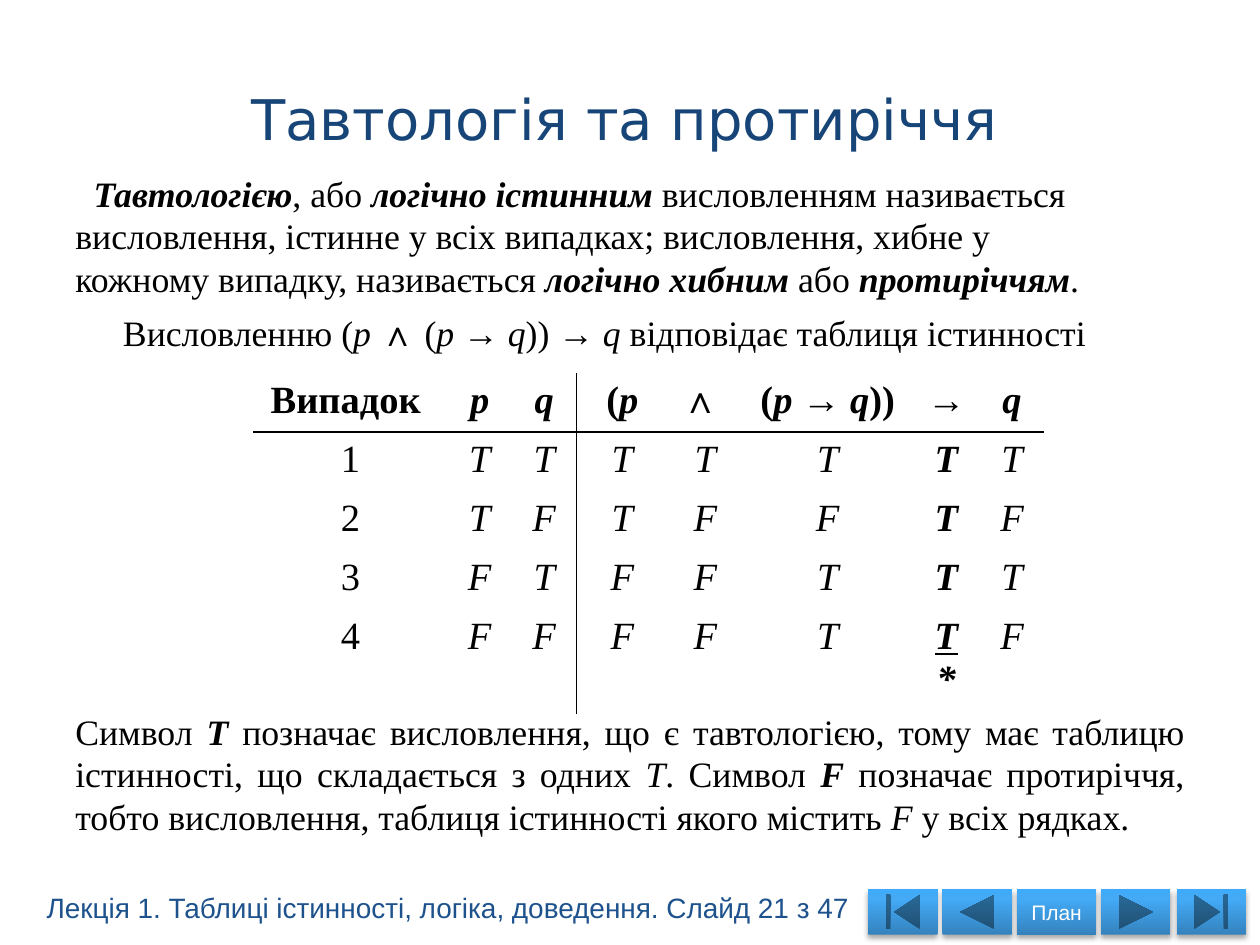
"""Build a slide on tautology and contradiction with a truth table."""
from dataclasses import dataclass
from typing import Any

from pptx import Presentation
from pptx.dml.color import RGBColor
from pptx.enum.shapes import MSO_SHAPE
from pptx.enum.text import MSO_ANCHOR, PP_ALIGN
from pptx.oxml import parse_xml
from pptx.oxml.ns import nsdecls, qn
from pptx.util import Cm, Pt

BLACK = RGBColor(0x00, 0x00, 0x00)
WHITE = RGBColor(0xFF, 0xFF, 0xFF)
NAVY = RGBColor(0x17, 0x45, 0x78)
BLUE = RGBColor(0x1D, 0x52, 0x8D)
STOPS = (
    (0, RGBColor(0x34, 0x83, 0xBE)),
    (80, RGBColor(0x44, 0xAA, 0xF6)),
    (100, RGBColor(0x40, 0xAB, 0xFB)),
)
SERIF = "Times New Roman"


@dataclass
class Bit:
    text: str
    mark: str = ""


@dataclass
class Para:
    bits: list[Bit]
    indent: float = 0
    before: float = 0


@dataclass
class Button:
    kind: MSO_SHAPE
    left: float
    width: float = 1.4
    label: str = ""


PARAS = [
    Para([Bit("Тавтологією", "bi"), Bit(", або "), Bit("логічно істинним ", "bi"),
          Bit("висловленням називається")], indent=0.37),
    Para([Bit("висловлення, істинне у всіх випадках; висловлення, хибне у")]),
    Para([Bit("кожному випадку, називається "), Bit("логічно хибним ", "bi"),
          Bit("або "), Bit("протиріччям", "bi"), Bit(".")]),
    Para([Bit("Висловленню ("), Bit("p ", "i"), Bit("∧ ("), Bit("p → q", "i"),
          Bit("))"), Bit(" → q", "i"), Bit(" відповідає таблиця істинності")],
         indent=0.96, before=6),
    Para([Bit("Символ "), Bit("Т", "bi"),
          Bit(" позначає висловлення, що є тавтологією, тому має таблицю "
              "істинності, що складається з одних "),
          Bit("Т", "i"), Bit(". Символ "), Bit("F", "bi"),
          Bit(" позначає протиріччя, тобто висловлення, таблиця істинності "
              "якого містить "),
          Bit("F", "i"), Bit(" у всіх рядках.")], before=203.5),
]
HEAD = [
    [Bit("Випадок ", "b")], [Bit("p", "bi")], [Bit("q", "bi")],
    [Bit(" (", "b"), Bit("p ", "bi")], [Bit("∧ ", "b")],
    [Bit("(", "b"), Bit("p ", "bi"), Bit("→ ", "b"), Bit("q", "bi"), Bit("))", "b")],
    [Bit("→", "b")], [Bit("q", "bi")],
]
CASES = ["TTTTTTT", "TFTFFTF", "FTFFTTT", "FFFFTTF"]
COLS = [3.91, 1.3, 1.3, 1.85, 1.5, 3.43, 1.35, 1.3]
ROWS = [1.19] * 4 + [2.11]
MAIN = 6
SPLIT = 2
BUTTONS = [
    Button(MSO_SHAPE.ACTION_BUTTON_BACK_OR_PREVIOUS, 19),
    Button(MSO_SHAPE.ACTION_BUTTON_BEGINNING, 17.5),
    Button(MSO_SHAPE.ACTION_BUTTON_FORWARD_OR_NEXT, 22.2),
    Button(MSO_SHAPE.ACTION_BUTTON_END, 23.72),
    Button(MSO_SHAPE.ACTION_BUTTON_CUSTOM, 20.5, 1.6, "План"),
]


def style(item: Any, look: dict[str, Any]) -> None:
    """Set each named value on the item."""
    for name, value in look.items():
        setattr(item, name, value)


def write(para: Any, bits: list[Bit], size: float,
          face: str = SERIF, ink: RGBColor = BLACK) -> None:
    """Add the bits to a paragraph as runs."""
    for bit in bits:
        run = para.add_run()
        run.text = bit.text
        style(run.font, {"name": face, "size": Pt(size), "bold": "b" in bit.mark,
                         "italic": "i" in bit.mark, "underline": "u" in bit.mark})
        run.font.color.rgb = ink


def add_body(slide: Any) -> None:
    """Add the running text above and below the table."""
    frame = slide.shapes.add_textbox(Cm(1.27), Cm(3.33), Cm(22.86), Cm(14.68)).text_frame
    frame.word_wrap = True
    for num, item in enumerate(PARAS):
        para = frame.add_paragraph() if num else frame.paragraphs[0]
        style(para, {"alignment": PP_ALIGN.JUSTIFY, "line_spacing": Pt(24.5)})
        if item.before:
            para.space_before = Pt(item.before)
        if item.indent:
            para._p.get_or_add_pPr().set("indent", str(Cm(item.indent)))
        write(para, item.bits, 20.4)


def rule(cell: Any, sides: str) -> None:
    """Draw black borders on the given sides and clear the others."""
    props = cell._tc.get_or_add_tcPr()
    for num, side in enumerate("LRTB"):
        fill = (f'<a:solidFill><a:srgbClr val="{BLACK}"/></a:solidFill>'
                if side in sides else "<a:noFill/>")
        props.insert(num, parse_xml(
            f'<a:ln{side} {nsdecls("a")} w="{Pt(1)}">{fill}</a:ln{side}>'))


def add_table(slide: Any) -> None:
    """Add the truth table."""
    table = slide.shapes.add_table(len(ROWS), len(COLS), Cm(5.11), Cm(7.52),
                                   Cm(sum(COLS)), Cm(sum(ROWS))).table
    style(table, {"first_row": False, "horz_banding": False})
    for col, width in zip(table.columns, COLS):
        col.width = Cm(width)
    for row, height in zip(table.rows, ROWS):
        row.height = Cm(height)
    grid = [HEAD]
    for num, case in enumerate(CASES, 1):
        marks = ["bi" if col == MAIN else "i" for col in range(1, len(COLS))]
        grid.append([[Bit(str(num))]] + [[Bit(*pair)] for pair in zip(case, marks)])
    grid[-1][MAIN][0].mark = "biu"
    for top, line in enumerate(grid):
        for left, bits in enumerate(line):
            cell = table.cell(top, left)
            cell.fill.background()
            sides = {0: "B", 1: "T"}.get(top, "")
            sides += {SPLIT: "R", SPLIT + 1: "L"}.get(left, "")
            rule(cell, sides)
            write(cell.text_frame.paragraphs[0], bits, 22)
    frame = table.cell(len(CASES), MAIN).text_frame
    write(frame.add_paragraph(), [Bit("*", "bi")], 22)
    for cell in table.iter_cells():
        for para in cell.text_frame.paragraphs:
            para.alignment = PP_ALIGN.CENTER


def add_button(group: Any, item: Button) -> None:
    """Add one shaded button to the group."""
    shape = group.shapes.add_shape(item.kind, Cm(item.left), Cm(17.93),
                                   Cm(item.width), Cm(0.91))
    shape.line.fill.background()
    stops = "".join(f'<a:gs pos="{pos * 1000}"><a:srgbClr val="{ink}"/></a:gs>'
                    for pos, ink in STOPS)
    props = shape._element.spPr
    props.find(qn("a:ln")).addprevious(parse_xml(
        f'<a:gradFill {nsdecls("a")} rotWithShape="1"><a:gsLst>{stops}</a:gsLst>'
        '<a:lin ang="16200000" scaled="0"/></a:gradFill>'))
    props.append(parse_xml(
        f'<a:effectLst {nsdecls("a")}><a:outerShdw blurRad="{Pt(3.1)}" '
        f'dist="{Pt(1.8)}" dir="5400000" rotWithShape="0"><a:srgbClr val="{BLACK}">'
        '<a:alpha val="35000"/></a:srgbClr></a:outerShdw></a:effectLst>'))
    if item.label:
        frame = shape.text_frame
        style(frame, {"vertical_anchor": MSO_ANCHOR.MIDDLE, "word_wrap": False})
        para = frame.paragraphs[0]
        para.alignment = PP_ALIGN.CENTER
        write(para, [Bit(item.label)], 12, "Arial", WHITE)


def main() -> None:
    """Build and save the slide."""
    deck = Presentation()
    style(deck, {"slide_width": Cm(25.4), "slide_height": Cm(19.05)})
    slide = deck.slides.add_slide(deck.slide_layouts[5])
    title = slide.shapes.title
    style(title, {"left": Cm(1.7), "top": Cm(1.6), "width": Cm(21.79), "height": Cm(1.57)})
    title.text_frame.vertical_anchor = MSO_ANCHOR.MIDDLE
    para = title.text_frame.paragraphs[0]
    para.alignment = PP_ALIGN.CENTER
    write(para, [Bit("Тавтологія та протиріччя")], 32, "DejaVu Sans", NAVY)
    add_body(slide)
    add_table(slide)
    group = slide.shapes.add_group_shape()
    for item in BUTTONS:
        add_button(group, item)
    foot = slide.shapes.add_textbox(Cm(0.69), Cm(17.83), Cm(16.92), Cm(0.94)).text_frame
    foot.word_wrap = False
    write(foot.paragraphs[0],
          [Bit("Лекція 1. Таблиці істинності, логіка, доведення. Слайд 21 з 47")],
          16, "Arial", BLUE)
    deck.save("out.pptx")


if __name__ == "__main__":
    main()
